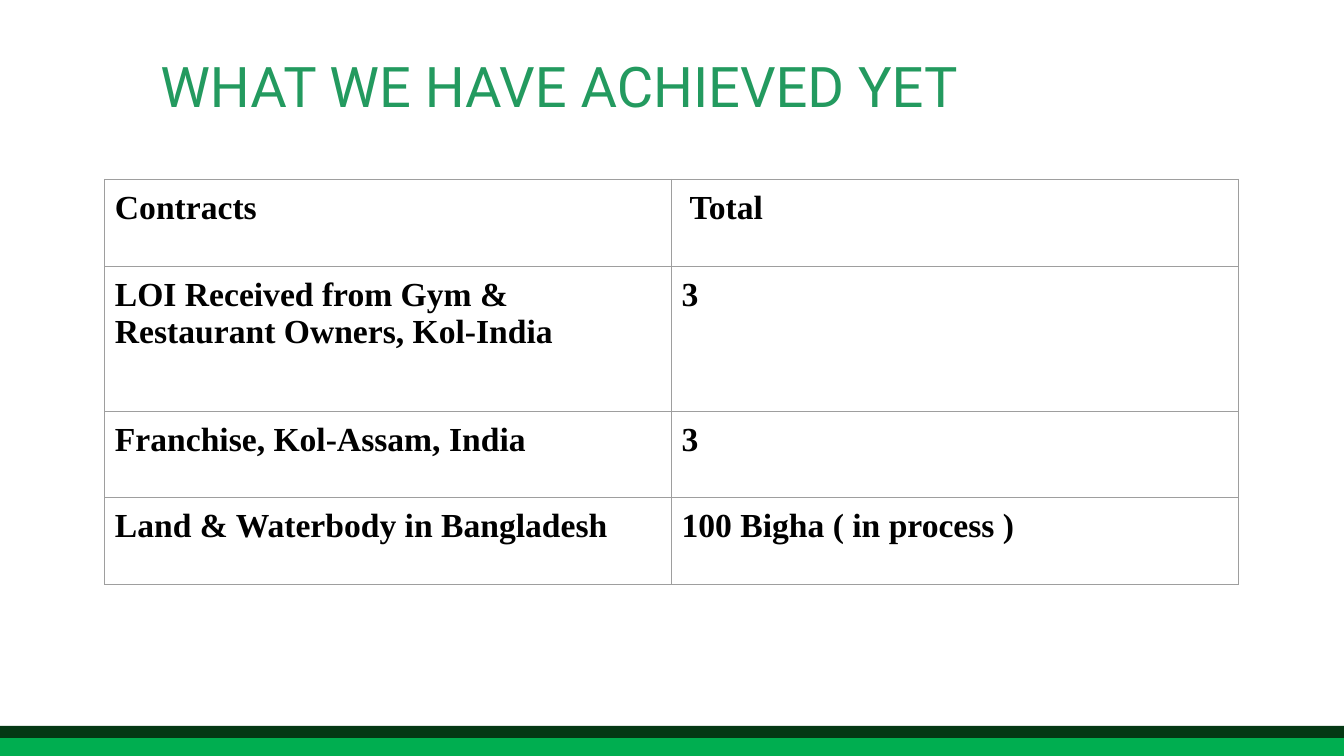
from lxml import etree
from pptx import Presentation
from pptx import util as u
from pptx.dml.color import RGBColor
from pptx.enum import shapes
from pptx.oxml import ns

SLIDE_W, SLIDE_H = 13.33, 7.5
ROW_HEIGHTS = [0.86, 1.44, 0.86, 0.86]
COL_WIDTH = 5.62
CONTRACTS = [
    ("Contracts", "Total"),
    ("LOI Received from Gym & Restaurant Owners, Kol-India", "3"),
    ("Franchise, Kol-Assam, India", "3"),
    ("Land & Waterbody in Bangladesh", "100 Bigha ( in process )"),
]


def rgb(color):
    return RGBColor.from_string(color)


def style_font(p, name, size, color, bold=False):
    p.font.name = name
    p.font.size = u.Pt(size)
    p.font.bold = bold
    p.font.color.rgb = rgb(color)


def set_margins(box, margin):
    """Give a text frame or table cell the same margin on all sides."""
    box.margin_left = box.margin_right = u.Inches(margin)
    box.margin_top = box.margin_bottom = u.Inches(margin)


def add_bar(s, top, height, color):
    """Add a full-width footer bar."""
    sp = s.shapes.add_shape(shapes.MSO_SHAPE.RECTANGLE, 0, u.Inches(top),
                            u.Inches(SLIDE_W), u.Inches(height))
    sp.shadow.inherit = False
    sp.fill.solid()
    sp.fill.fore_color.rgb = rgb(color)
    sp.line.fill.background()


def add_title(s, title):
    sp = s.shapes.add_textbox(u.Inches(1.59), u.Inches(0.51),
                              u.Inches(9.58), u.Inches(0.67))
    tf = sp.text_frame
    tf.word_wrap = True
    set_margins(tf, 0)
    tf.text = title
    style_font(tf.paragraphs[0], "Roboto", 40, "239A5F")


def set_borders(cell, color, width):
    """Outline all four sides of a cell; call before setting its fill."""
    tc_pr = cell._tc.get_or_add_tcPr()
    for side in ("a:lnL", "a:lnR", "a:lnT", "a:lnB"):
        ln = etree.SubElement(tc_pr, ns.qn(side), w=str(u.Pt(width)))
        fill = etree.SubElement(ln, ns.qn("a:solidFill"))
        etree.SubElement(fill, ns.qn("a:srgbClr"), val=color)


def add_contracts_table(s):
    frame = s.shapes.add_table(len(CONTRACTS), 2, u.Inches(1.04), u.Inches(1.78),
                               u.Inches(2 * COL_WIDTH), u.Inches(sum(ROW_HEIGHTS)))
    table = frame.table
    table.first_row = table.horz_banding = False
    for column in table.columns:
        column.width = u.Inches(COL_WIDTH)
    for row, height, values in zip(table.rows, ROW_HEIGHTS, CONTRACTS):
        row.height = u.Inches(height)
        for cell, value in zip(row.cells, values):
            cell.text = value
            set_margins(cell, 0.1)
            set_borders(cell, "9E9E9E", 0.75)
            cell.fill.background()
            style_font(cell.text_frame.paragraphs[0], "Times New Roman", 24,
                       "000000", bold=True)
    table.cell(0, 1).margin_left = u.Inches(0.18)


def main():
    prs = Presentation()
    prs.slide_width = u.Inches(SLIDE_W)
    prs.slide_height = u.Inches(SLIDE_H)
    s = prs.slides.add_slide(prs.slide_layouts[6])
    add_bar(s, 7.32, 0.18, "00AE50")
    add_bar(s, 7.2, 0.12, "043814")
    add_title(s, "WHAT WE HAVE ACHIEVED YET")
    add_contracts_table(s)
    prs.save("out.pptx")


if __name__ == "__main__":
    main()
